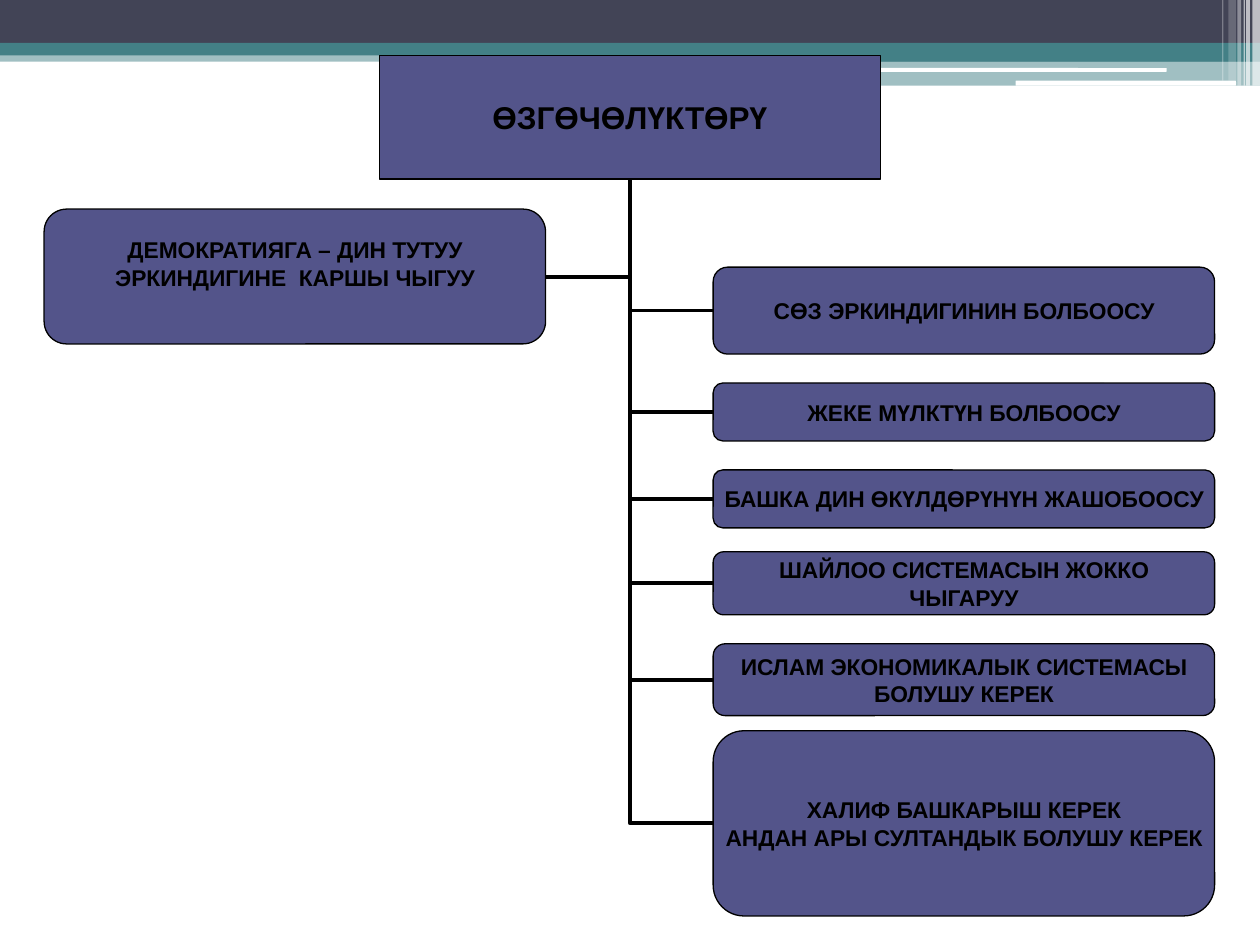
from dataclasses import dataclass

from lxml import etree
from pptx import Presentation
from pptx.dml.color import RGBColor
from pptx.enum.shapes import MSO_CONNECTOR as CXN, MSO_SHAPE as SHAPE
from pptx.enum.text import MSO_ANCHOR as ANCHOR, PP_ALIGN as ALIGN
from pptx.oxml.ns import qn
from pptx.util import Inches, Pt


@dataclass(frozen=True)
class Theme:
    font: str = "Arial"
    ink: str = "000000"
    box: str = "53548A"
    dark: str = "424456"
    teal: str = "438086"
    white: str = "FFFFFF"
    title_size: int = 18
    text_size: int = 13
    outline: float = 0.75
    link: float = 2.25


class ChartSlide:
    """Draws the elements of an organisation chart in one theme."""

    def __init__(self, s, theme):
        self.s = s
        self.theme = theme

    def bar(self, at, color, alpha=100, kind=SHAPE.RECTANGLE):
        sp = self.s.shapes.add_shape(kind, *map(Inches, at))
        sp.shadow.inherit = False
        sp.fill.solid()
        sp.fill.fore_color.rgb = RGBColor.from_string(color)
        sp.line.fill.background()
        if alpha < 100:
            clr = sp.fill._xPr.find(qn("a:solidFill"))[0]
            etree.SubElement(clr, qn("a:alpha"), val=str(alpha * 1000))

    def title(self, at, text):
        sp = self.s.shapes.title
        sp.left, sp.top, sp.width, sp.height = map(Inches, at)
        geom = etree.SubElement(sp._element.spPr, qn("a:prstGeom"), prst="roundRect")
        etree.SubElement(geom, qn("a:avLst"))
        self.s.shapes._spTree.append(sp._element)
        return self.style(sp, [text], self.theme.title_size)

    def box(self, at, lines, bottom=0):
        sp = self.s.shapes.add_shape(SHAPE.ROUNDED_RECTANGLE, *map(Inches, at))
        sp.shadow.inherit = False
        return self.style(sp, lines, self.theme.text_size, bottom)

    def style(self, sp, lines, size, bottom=0):
        t = self.theme
        sp.fill.solid()
        sp.fill.fore_color.rgb = RGBColor.from_string(t.box)
        sp.line.color.rgb = RGBColor.from_string(t.ink)
        sp.line.width = Pt(t.outline)
        tf = sp.text_frame
        tf.text = "\n".join(lines)
        tf.word_wrap = False
        tf.vertical_anchor = ANCHOR.MIDDLE
        tf.margin_left = tf.margin_right = tf.margin_top = 0
        tf.margin_bottom = Inches(bottom)
        for p in tf.paragraphs:
            p.alignment = ALIGN.CENTER
            p.font.name = t.font
            p.font.size = Pt(size)
            p.font.bold = True
            p.font.color.rgb = RGBColor.from_string(t.ink)
        return sp

    def link(self, child, side, root):
        cx = self.s.shapes.add_connector(CXN.ELBOW, 0, 0, 0, 0)
        cx.begin_connect(child, side)
        cx.end_connect(root, 2)
        cx.line.color.rgb = RGBColor.from_string(self.theme.ink)
        cx.line.width = Pt(self.theme.link)
        sp_pr = cx._element.spPr
        sp_pr.find(qn("a:prstGeom")).set("prst", "bentConnector2")
        etree.SubElement(sp_pr, qn("a:effectLst"))


def main():
    prs = Presentation()
    prs.slide_width, prs.slide_height = Inches(10), Inches(7.5)
    theme = Theme()
    chart = ChartSlide(prs.slides.add_slide(prs.slide_layouts[5]), theme)

    for at, color, alpha in [
        ((0, 0.4, 10, 0.09), theme.teal, 50),
        ((0, 0, 10, 0.34), theme.dark, 100),
        ((0, 0.34, 10, 0.1), theme.teal, 100),
        ((5.92, 0.39, 4.08, 0.1), theme.teal, 100),
        ((5.92, 0.48, 4.08, 0.2), theme.teal, 50),
    ]:
        chart.bar(at, color, alpha)
    for at in [(5.91, 0.54, 3.35, 0.03), (8.06, 0.64, 1.75, 0.04)]:
        chart.bar(at, theme.white, kind=SHAPE.ROUNDED_RECTANGLE)
    for left, width, height, alpha in [
        (9.94, 0.06, 0.68, 65),
        (9.89, 0.03, 0.68, 65),
        (9.87, 0.01, 0.68, 60),
        (9.82, 0.03, 0.68, 40),
        (9.75, 0.06, 0.64, 20),
        (9.7, 0.01, 0.64, 30),
    ]:
        chart.bar((left, 0, width, height), theme.white, alpha)

    width = 3.98
    root = chart.title((3.01, 0.44, width, 0.98), "ӨЗГӨЧӨЛҮКТӨРҮ")
    left_box = chart.box(
        (0.35, 1.66, width, 1.07),
        ["ДЕМОКРАТИЯГА – ДИН ТУТУУ", "ЭРКИНДИГИНЕ  КАРШЫ ЧЫГУУ"],
        bottom=0.21,
    )
    chart.link(left_box, 3, root)
    for top, height, lines in [
        (2.12, 0.69, ["СӨЗ ЭРКИНДИГИНИН БОЛБООСУ"]),
        (3.04, 0.46, ["ЖЕКЕ МҮЛКТҮН БОЛБООСУ"]),
        (3.73, 0.46, ["БАШКА ДИН ӨКҮЛДӨРҮНҮН ЖАШОБООСУ"]),
        (4.38, 0.5, ["ШАЙЛОО СИСТЕМАСЫН ЖОККО", "ЧЫГАРУУ"]),
        (5.11, 0.57, ["ИСЛАМ ЭКОНОМИКАЛЫК СИСТЕМАСЫ", "БОЛУШУ КЕРЕК"]),
        (5.8, 1.47, ["ХАЛИФ БАШКАРЫШ КЕРЕК", "АНДАН АРЫ СУЛТАНДЫК БОЛУШУ КЕРЕК"]),
    ]:
        chart.link(chart.box((5.66, top, width, height), lines), 1, root)

    prs.save("out.pptx")


if __name__ == "__main__":
    main()
